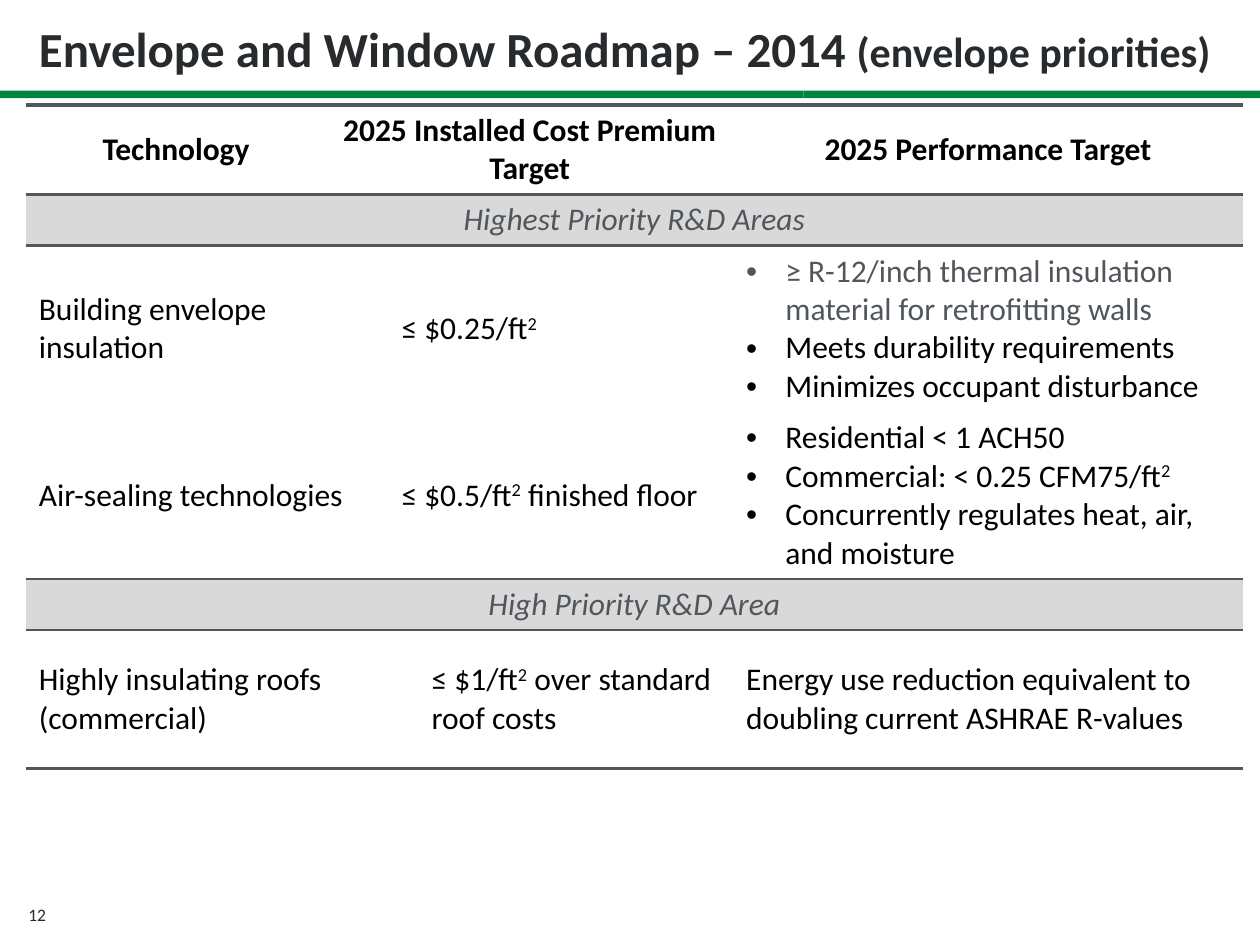
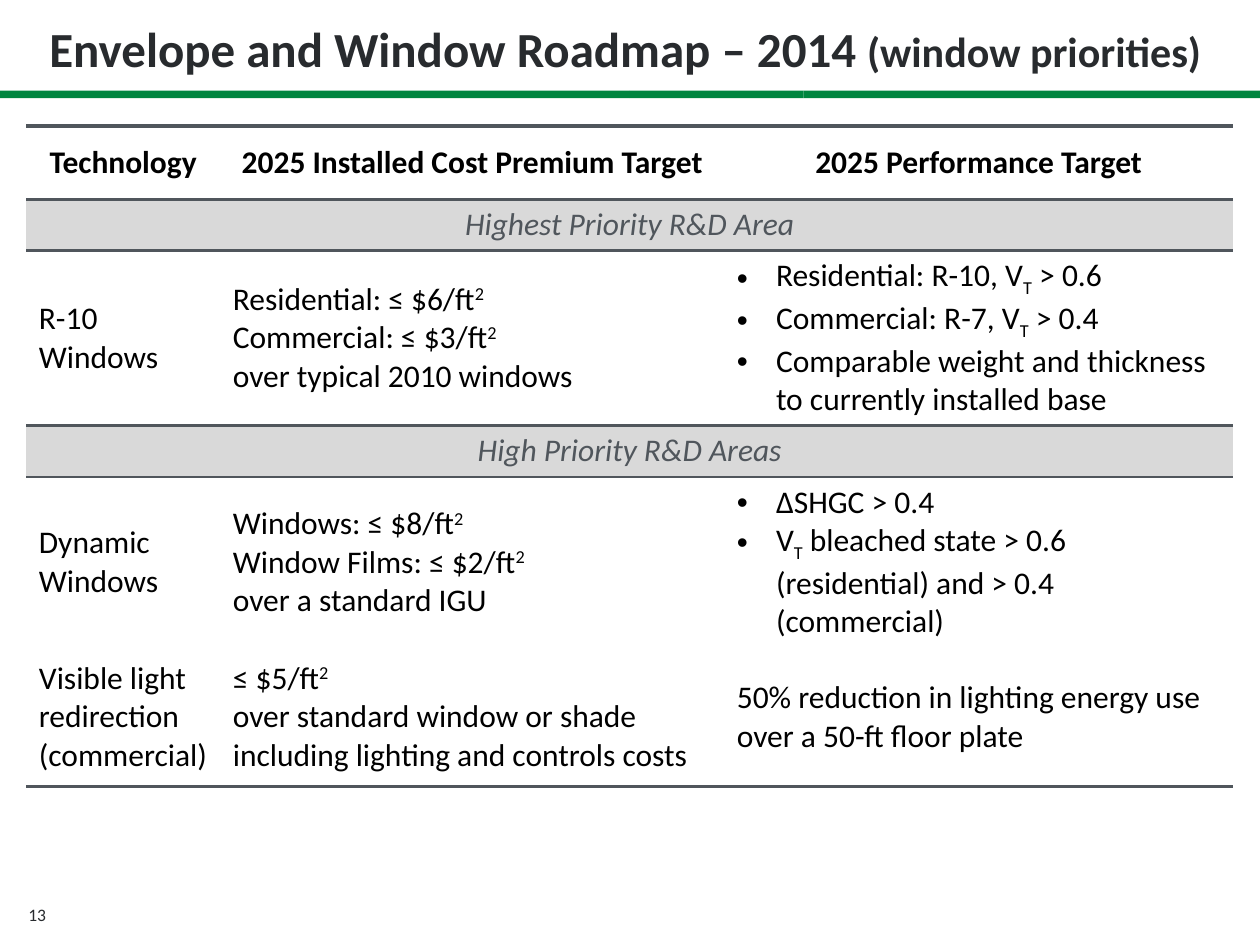
"""Build two roadmap slides on envelope and window research priorities."""
from dataclasses import dataclass

from lxml.etree import SubElement
from pptx import Presentation
from pptx.dml.color import RGBColor
from pptx.enum.shapes import MSO_SHAPE as Preset
from pptx.enum.text import MSO_ANCHOR as Anchor, MSO_AUTO_SIZE as AutoSize, PP_ALIGN as Align
from pptx.oxml.ns import qn
from pptx.util import Cm, Pt


@dataclass(frozen=True)
class Theme:
    """Colours, type sizes and line weights of the deck."""
    font: str = "Calibri"
    heading: str = "282B2E"
    body: str = "000000"
    muted: str = "50565C"
    accent: str = "00853F"
    section: str = "D9D9D9"
    title_size: float = 28
    focus_size: float = 24
    cell_size: float = 18
    number_size: float = 10
    outer_rule: float = 2.25
    inner_rule: float = 1.5
    plain_table: str = "{2D5ABB26-0587-4C30-8999-92F81FD0307C}"


@dataclass(frozen=True)
class Entry:
    """One table entry; in its lines |^ starts a superscript, |_ a subscript, | normal text."""
    lines: tuple[str, ...]
    span: int = 1
    bulleted: bool = False
    muted_lead: bool = False


@dataclass(frozen=True)
class Row:
    """One table row."""
    height: float
    entries: tuple[Entry, ...]
    kind: str = "body"


@dataclass(frozen=True)
class Roadmap:
    """One slide: its title focus, number and table."""
    focus: str
    number: int
    title_left: float
    table_top: float
    columns: tuple[float, ...]
    rows: tuple[Row, ...]


THEME = Theme()
TITLE = "Envelope and Window Roadmap – 2014 "
TITLE_RIGHT = 24.77
TABLE_LEFT = 0.53
BAND_EDGES = (0, 12.7, 16.2, 25.4)
HANG = Cm(0.79)
BASELINES = {"^": "30000", "_": "-25000"}


def entry(*lines: str, span: int = 1) -> Entry:
    """Make a plain entry."""
    return Entry(lines, span)


def bullets(*lines: str, muted_lead: bool = False) -> Entry:
    """Make a bulleted entry."""
    return Entry(lines, bulleted=True, muted_lead=muted_lead)


def header(height: float, cost_span: int = 1) -> Row:
    """Make the column heading row."""
    return Row(height, (entry("Technology"),
                        entry("2025 Installed Cost Premium Target", span=cost_span),
                        entry("2025 Performance Target")), "header")


def section(label: str, span: int) -> Row:
    """Make a shaded full-width priority row."""
    return Row(1.03, (entry(label, span=span),), "section")


ROADMAPS = (
    Roadmap("(envelope priorities)", 12, 0.53, 2.12, (6.04, 1.27, 0.43, 6.34, 10.26), (
        header(1.8, cost_span=3),
        section("Highest Priority R&D Areas", 5),
        Row(3.36, (
            entry("Building envelope insulation", span=2),
            entry("≤ $0.25/ft|^2", span=2),
            bullets("≥ R-12/inch thermal insulation material for retrofitting walls",
                    "Meets durability requirements",
                    "Minimizes occupant disturbance", muted_lead=True))),
        Row(3.36, (
            entry("Air-sealing technologies", span=2),
            entry("≤ $0.5/ft|^2| finished floor", span=2),
            bullets("Residential < 1 ACH50",
                    "Commercial: < 0.25 CFM75/ft|^2",
                    "Concurrently regulates heat, air, and moisture"))),
        section("High Priority R&D Area", 5),
        Row(2.79, (
            entry("Highly insulating roofs", "(commercial)", span=3),
            entry("≤ $1/ft|^2| over standard roof costs"),
            entry("Energy use reduction equivalent to doubling current ASHRAE R-values"))),
    )),
    Roadmap("(window priorities)", 13, 0.74, 2.54, (3.91, 10.16, 10.26), (
        header(1.48),
        section("Highest Priority R&D Area", 3),
        Row(3.53, (
            entry("R-10 Windows"),
            entry("Residential: ≤ $6/ft|^2", "Commercial: ≤ $3/ft|^2",
                  "over typical 2010 windows"),
            bullets("Residential: R-10, V|_T| > 0.6",
                    "Commercial: R-7, V|_T| > 0.4",
                    "Comparable weight and thickness to currently installed base"))),
        section("High Priority R&D Areas", 3),
        Row(3.45, (
            entry("Dynamic Windows"),
            entry("Windows: ≤ $8/ft|^2", "Window Films: ≤ $2/ft|^2",
                  "over a standard IGU"),
            bullets("ΔSHGC > 0.4",
                    "V|_T| bleached state > 0.6 (residential) and > 0.4 (commercial)"))),
        Row(2.79, (
            entry("Visible light redirection (commercial)"),
            entry("≤ $5/ft|^2", "over standard window or shade",
                  "including lighting and controls costs"),
            entry("50% reduction in lighting energy use over a 50-ft floor plate"))),
    )),
)


def style(span, size: float, color: str, bold: bool = False, italic: bool = False) -> None:
    """Format one run."""
    span.font.name = THEME.font
    span.font.size = Pt(size)
    span.font.bold = bold
    span.font.italic = italic
    span.font.color.rgb = RGBColor.from_string(color)


def add_title(page, roadmap: Roadmap) -> None:
    """Place the title with its smaller focus words."""
    box = page.shapes.title
    box.left, box.top = Cm(roadmap.title_left), Cm(-0.2)
    box.width, box.height = Cm(TITLE_RIGHT - roadmap.title_left), Cm(2.54)
    frame = box.text_frame
    frame.auto_size = AutoSize.NONE
    frame.vertical_anchor = Anchor.MIDDLE
    para = frame.paragraphs[0]
    para.alignment = Align.LEFT
    para.line_spacing = Pt(28)
    for text, size in ((TITLE, THEME.title_size), (roadmap.focus, THEME.focus_size)):
        span = para.add_run()
        span.text = text
        style(span, size, THEME.heading, bold=True)


def add_furniture(page, number: int) -> None:
    """Draw the green band in its segments and the slide number."""
    for left, right in zip(BAND_EDGES, BAND_EDGES[1:]):
        band = page.shapes.add_shape(Preset.RECTANGLE, Cm(left), Cm(1.83),
                                     Cm(right - left), Cm(0.15))
        band.shadow.inherit = False
        band.fill.solid()
        band.fill.fore_color.rgb = RGBColor.from_string(THEME.accent)
        band.line.fill.background()
    box = page.shapes.add_textbox(Cm(0.13), Cm(18.14), Cm(1.24), Cm(0.66))
    box.text_frame.word_wrap = True
    para = box.text_frame.paragraphs[0]
    para.text = str(number)
    para.alignment = Align.CENTER
    para.line_spacing = 0.9
    style(para.runs[0], THEME.number_size, THEME.heading)


def add_rule(cell, side: str, weight: float) -> None:
    """Draw one horizontal cell border."""
    line = SubElement(cell._tc.get_or_add_tcPr(), qn(f"a:{side}"), w=str(Pt(weight)))
    fill = SubElement(line, qn("a:solidFill"))
    SubElement(fill, qn("a:srgbClr"), val=THEME.muted)


def add_bullet(para) -> None:
    """Give a paragraph a hanging bullet."""
    properties = para._p.get_or_add_pPr()
    properties.set("marL", str(HANG))
    properties.set("indent", str(-HANG))
    SubElement(properties, qn("a:buFont"), typeface="Arial")
    SubElement(properties, qn("a:buChar"), char="•")


def write_entry(cell, item: Entry, kind: str) -> None:
    """Write the lines of an entry into a cell."""
    cell.vertical_anchor = Anchor.MIDDLE
    cell.text_frame.text = "\n".join(item.lines)
    for index, (para, line) in enumerate(zip(cell.text_frame.paragraphs, item.lines)):
        para.text = ""
        para.alignment = Align.LEFT if kind == "body" else Align.CENTER
        if item.bulleted:
            add_bullet(para)
        muted = kind == "section" or (item.muted_lead and index == 0)
        for part in line.split("|"):
            shift = BASELINES.get(part[0])
            span = para.add_run()
            span.text = part[1:] if shift else part
            style(span, THEME.cell_size, THEME.muted if muted else THEME.body,
                  bold=kind == "header", italic=kind == "section")
            if shift:
                span.font._element.set("baseline", shift)


def rule_below(rows: tuple[Row, ...], index: int) -> float:
    """Return the weight of the line under a row, zero for none."""
    if index == len(rows) - 1 or rows[index].kind == "header":
        return THEME.outer_rule
    return THEME.inner_rule if "section" in (rows[index].kind, rows[index + 1].kind) else 0


def add_roadmap_table(page, roadmap: Roadmap) -> None:
    """Draw the table of targets."""
    rows, columns = roadmap.rows, roadmap.columns
    frame = page.shapes.add_table(len(rows), len(columns), Cm(TABLE_LEFT), Cm(roadmap.table_top),
                                  Cm(sum(columns)), Cm(sum(row.height for row in rows)))
    table = frame.table
    table.first_row = table.horz_banding = False
    for style_id in frame.element.iter(qn("a:tableStyleId")):
        style_id.text = THEME.plain_table
    for column, width in zip(table.columns, columns):
        column.width = Cm(width)
    for index, row in enumerate(rows):
        table.rows[index].height = Cm(row.height)
        weight = rule_below(rows, index)
        for cell in table.rows[index].cells:
            if index == 0:
                add_rule(cell, "lnT", THEME.outer_rule)
            if weight:
                add_rule(cell, "lnB", weight)
            if row.kind == "section":
                cell.fill.solid()
                cell.fill.fore_color.rgb = RGBColor.from_string(THEME.section)
            else:
                cell.fill.background()
        start = 0
        for item in row.entries:
            cell = table.cell(index, start)
            if item.span > 1:
                cell.merge(table.cell(index, start + item.span - 1))
            write_entry(cell, item, row.kind)
            start += item.span


def main() -> None:
    """Build and save the deck."""
    deck = Presentation()
    deck.slide_width, deck.slide_height = Cm(25.4), Cm(19.05)
    for roadmap in ROADMAPS:
        page = deck.slides.add_slide(deck.slide_layouts[5])
        add_furniture(page, roadmap.number)
        add_title(page, roadmap)
        add_roadmap_table(page, roadmap)
    deck.save("out.pptx")


if __name__ == "__main__":
    main()
